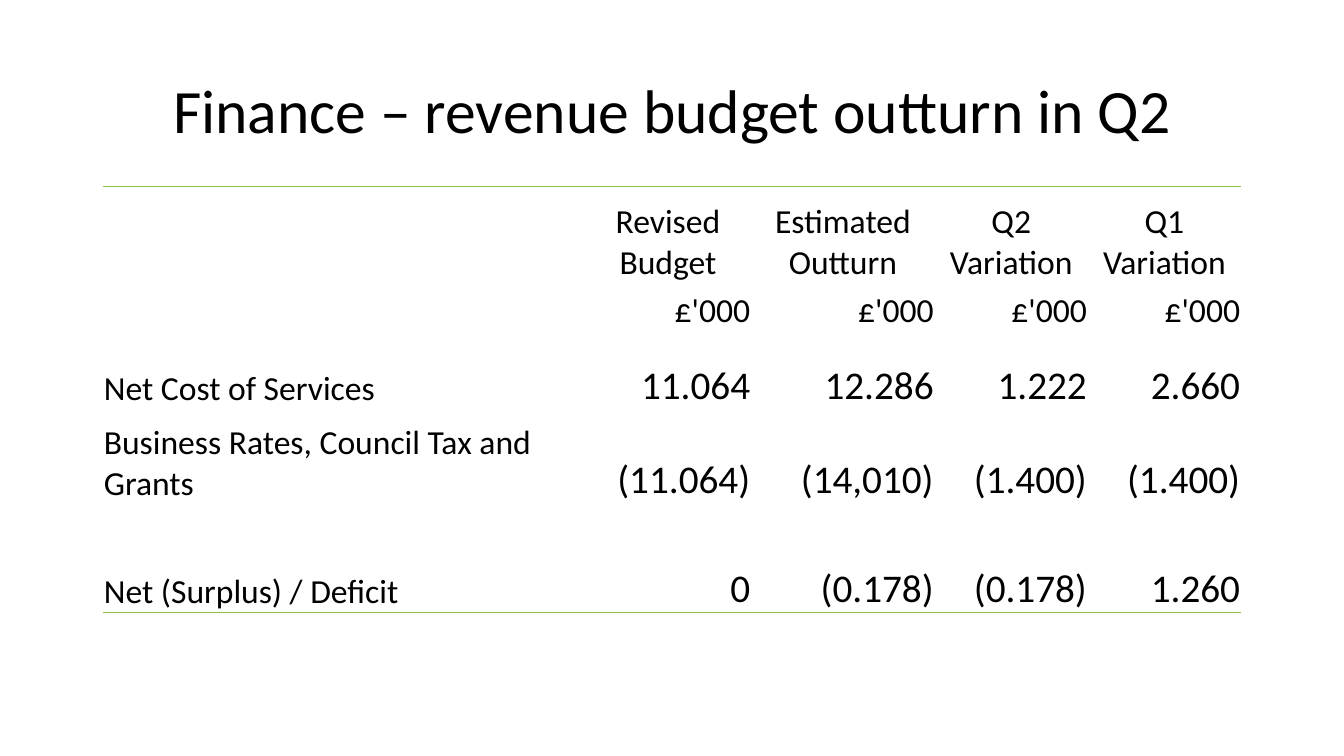
from lxml import etree
from pptx import Presentation
from pptx.dml.color import RGBColor
from pptx.enum.text import MSO_ANCHOR, PP_ALIGN
from pptx.oxml.ns import qn
from pptx.util import Inches, Pt

LEFT, CENTER, RIGHT = PP_ALIGN.LEFT, PP_ALIGN.CENTER, PP_ALIGN.RIGHT
MIDDLE, BOTTOM = MSO_ANCHOR.MIDDLE, MSO_ANCHOR.BOTTOM
NO_STYLE = "{2D5ABB26-0587-4C30-8999-92F81FD0307C}"
BLACK, GREEN = "000000", "8BC145"

COL_WIDTHS = [4.78, 1.65, 1.82, 1.52, 1.52]
ROW_HEIGHTS = [0.96, 0.48, 0.29, 0.48, 0.94, 0.59, 0.48]
ROWS = [
    ["", "Revised Budget", "Estimated Outturn", "Q2 Variation", "Q1 Variation"],
    [""] + ["£'000"] * 4,
    [""] * 5,
    ["Net Cost of Services", "11.064", "12.286", "1.222", "2.660"],
    ["Business Rates, Council Tax and Grants", "(11.064)", "(14,010)", "(1.400)", "(1.400)"],
    [""] * 5,
    ["Net (Surplus) / Deficit", "0", "(0.178)", "(0.178)", "1.260"],
]
BORDERS = {0: "a:lnT", len(ROWS) - 1: "a:lnB"}


def write(p, text, size, align):
    p.text = text
    p.alignment = align
    for r in p.runs:
        r.font.name = "Calibri"
        r.font.size = Pt(size)
        r.font.color.rgb = RGBColor.from_string(BLACK)


def add_border(cell, tag, color):
    ln = etree.SubElement(cell._tc.get_or_add_tcPr(), qn(tag), w=str(Pt(1)))
    fill = etree.SubElement(ln, qn("a:solidFill"))
    etree.SubElement(fill, qn("a:srgbClr"), val=color)


prs = Presentation()
prs.slide_width, prs.slide_height = Inches(13.33), Inches(7.5)
s = prs.slides.add_slide(prs.slide_layouts[5])

title = s.shapes.title
title.left, title.top = Inches(0.92), Inches(0.4)
title.width, title.height = Inches(11.5), Inches(1.45)
title.text_frame.vertical_anchor = MIDDLE
p = title.text_frame.paragraphs[0]
write(p, "Finance – revenue budget outturn in Q2", 44, CENTER)
p.line_spacing = 0.9

frame = s.shapes.add_table(len(ROWS), len(COL_WIDTHS), Inches(1.02), Inches(1.85),
                           Inches(sum(COL_WIDTHS)), Inches(sum(ROW_HEIGHTS)))
table = frame.table
table.first_row = table.horz_banding = False
table._tbl.tblPr.find(qn("a:tableStyleId")).text = NO_STYLE
for column, width in zip(table.columns, COL_WIDTHS):
    column.width = Inches(width)

for i, texts in enumerate(ROWS):
    table.rows[i].height = Inches(ROW_HEIGHTS[i])
    for j, text in enumerate(texts):
        cell = table.cell(i, j)
        cell.vertical_anchor = BOTTOM
        cell.margin_left = cell.margin_right = cell.margin_top = Inches(0.01)
        cell.margin_bottom = 0
        if i in BORDERS:
            add_border(cell, BORDERS[i], GREEN)
        cell.fill.background()
        p = cell.text_frame.paragraphs[0]
        if text:
            size = 28 if i > 2 and j > 0 else 24
            align = LEFT if j == 0 else CENTER if i == 0 else RIGHT
            write(p, text, size, align)
        else:
            etree.SubElement(p._p, qn("a:endParaRPr"), sz="1200")

prs.save("out.pptx")
